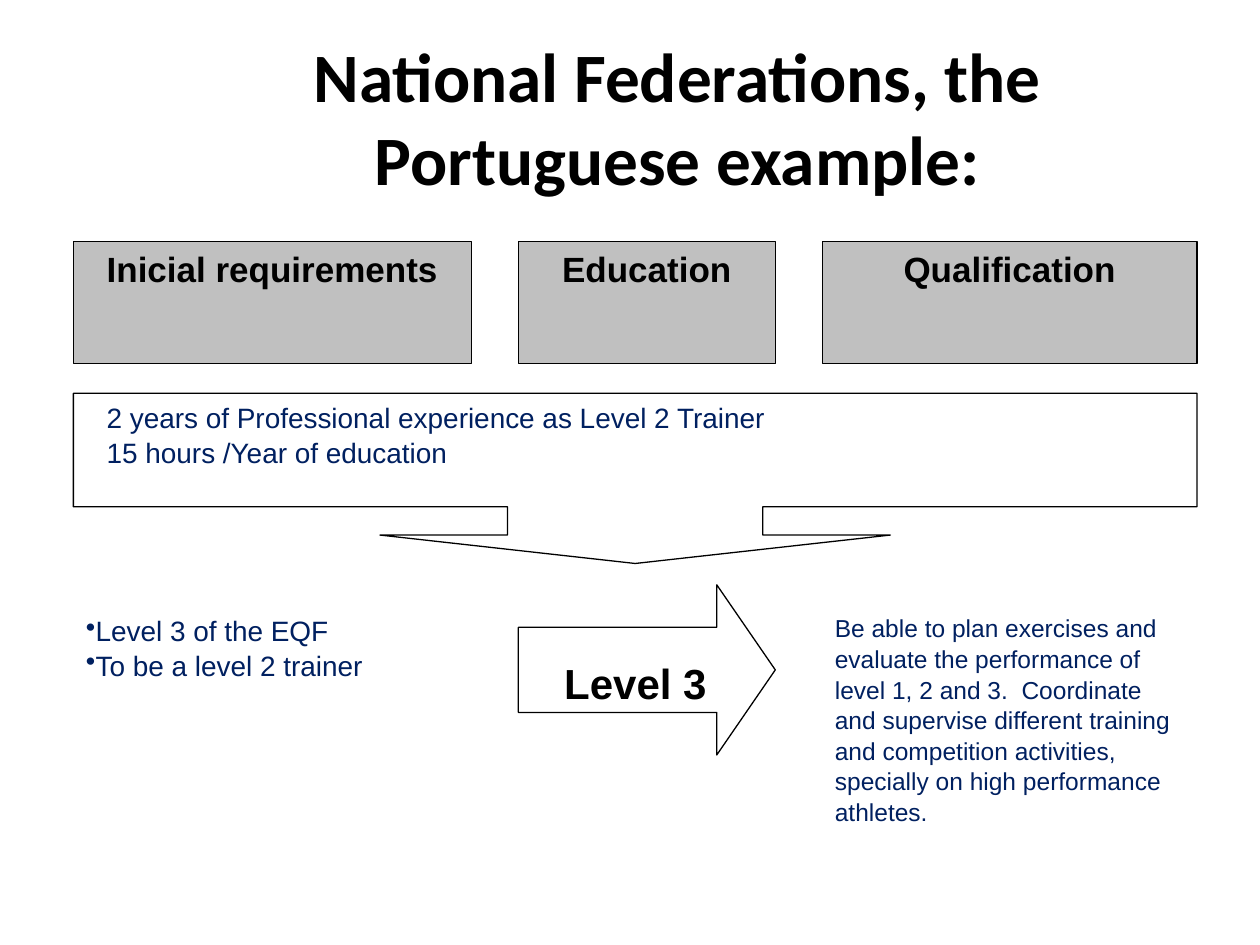
from typing import NamedTuple

from lxml.etree import SubElement
from pptx import Presentation
from pptx.dml.color import RGBColor
from pptx.enum.shapes import MSO_SHAPE
from pptx.enum.text import MSO_ANCHOR, PP_ALIGN
from pptx.oxml.ns import qn
from pptx.util import Cm, Pt

BLACK, WHITE, GREY, NAVY = "000000", "FFFFFF", "C0C0C0", "002060"


class Column(NamedTuple):
    heading: str
    left: float
    width: float


COLUMNS = [
    Column("Inicial requirements", 1.48, 8.02),
    Column("Education", 10.45, 5.18),
    Column("Qualification", 16.58, 7.55),
]
REQUIREMENTS, EDUCATION, QUALIFICATION = COLUMNS
FULL_WIDTH = QUALIFICATION.left + QUALIFICATION.width - REQUIREMENTS.left


def rgb(value: str) -> RGBColor:
    return RGBColor.from_string(value)


def add_box(s, left: float, top: float, width: float, height: float, *,
            kind=MSO_SHAPE.RECTANGLE, fill: str | None = None,
            line: str | None = None, adjustments: tuple = ()):
    """Add a preset shape measured in centimetres, without a shadow."""
    sp = s.shapes.add_shape(kind, Cm(left), Cm(top), Cm(width), Cm(height))
    sp.shadow.inherit = False
    for i, value in enumerate(adjustments):
        sp.adjustments[i] = value
    if fill:
        sp.fill.solid()
        sp.fill.fore_color.rgb = rgb(fill)
    else:
        sp.fill.background()
    if line:
        sp.line.color.rgb = rgb(line)
        sp.line.width = Pt(0.75)
    else:
        sp.line.fill.background()
    return sp


def add_label(s, left: float, top: float, width: float, height: float):
    return s.shapes.add_textbox(Cm(left), Cm(top), Cm(width), Cm(height))


def write(sp, text: str, *, size: float, color: str = BLACK, font: str = "Arial",
          bold: bool = False, align=PP_ALIGN.LEFT, anchor=MSO_ANCHOR.TOP,
          spacing: float = 1.0, bullet: str | None = None) -> None:
    """Write each line of the text as a paragraph."""
    tf = sp.text_frame
    tf.word_wrap = True
    tf.vertical_anchor = anchor
    for i, line in enumerate(text.split("\n")):
        p = tf.add_paragraph() if i else tf.paragraphs[0]
        p.alignment = align
        p.line_spacing = spacing
        if bullet:
            SubElement(p._p.get_or_add_pPr(), qn("a:buChar"), char=bullet)
        r = p.add_run()
        r.text = line
        r.font.name = font
        r.font.size = Pt(size)
        r.font.bold = bold
        r.font.color.rgb = rgb(color)


def main() -> None:
    prs = Presentation()
    prs.slide_width, prs.slide_height = Cm(25.4), Cm(19.05)
    s = prs.slides.add_slide(prs.slide_layouts[6])

    write(add_label(s, 3.18, 0.76, 20.95, 3.18),
          "National Federations, the Portuguese example:", size=39.6,
          font="Calibri", bold=True, align=PP_ALIGN.CENTER, anchor=MSO_ANCHOR.MIDDLE)

    for column in COLUMNS:
        sp = add_box(s, column.left, 4.87, column.width, 2.46, fill=GREY, line=BLACK)
        write(sp, column.heading, size=20, bold=True, align=PP_ALIGN.CENTER)

    add_box(s, REQUIREMENTS.left, 7.93, FULL_WIDTH, 3.43,
            kind=MSO_SHAPE.DOWN_ARROW_CALLOUT, fill=WHITE, line=BLACK,
            adjustments=(1.5, 1.5, 0.167, 0.667))
    write(add_label(s, 1.9, 7.93, 21.28, 2.13),
          "2 years of Professional experience as Level 2 Trainer\n"
          "15 hours /Year of education",
          size=16, color=NAVY, spacing=1.04)

    write(add_box(s, REQUIREMENTS.left, 12.22, REQUIREMENTS.width, 3.43, fill=WHITE),
          "Level 3 of the EQF\nTo be a level 2 trainer",
          size=16, color=NAVY, spacing=1.04, bullet="•")
    write(add_box(s, QUALIFICATION.left, 12.22, QUALIFICATION.width, 4.72, fill=WHITE),
          "Be able to plan exercises and evaluate the performance of level 1, 2 and 3.  "
          "Coordinate and supervise different training and competition activities, "
          "specially on high performance athletes.",
          size=14, color=NAVY, spacing=1.04)

    add_box(s, EDUCATION.left, 11.79, EDUCATION.width, 3.43,
            kind=MSO_SHAPE.RIGHT_ARROW, line=BLACK, adjustments=(0.5, 0.344))
    write(add_label(s, 10.92, 13.08, 3.78, 1.32), "Level 3",
          size=24, bold=True, align=PP_ALIGN.CENTER, spacing=1.04)

    prs.save("out.pptx")


if __name__ == "__main__":
    main()
